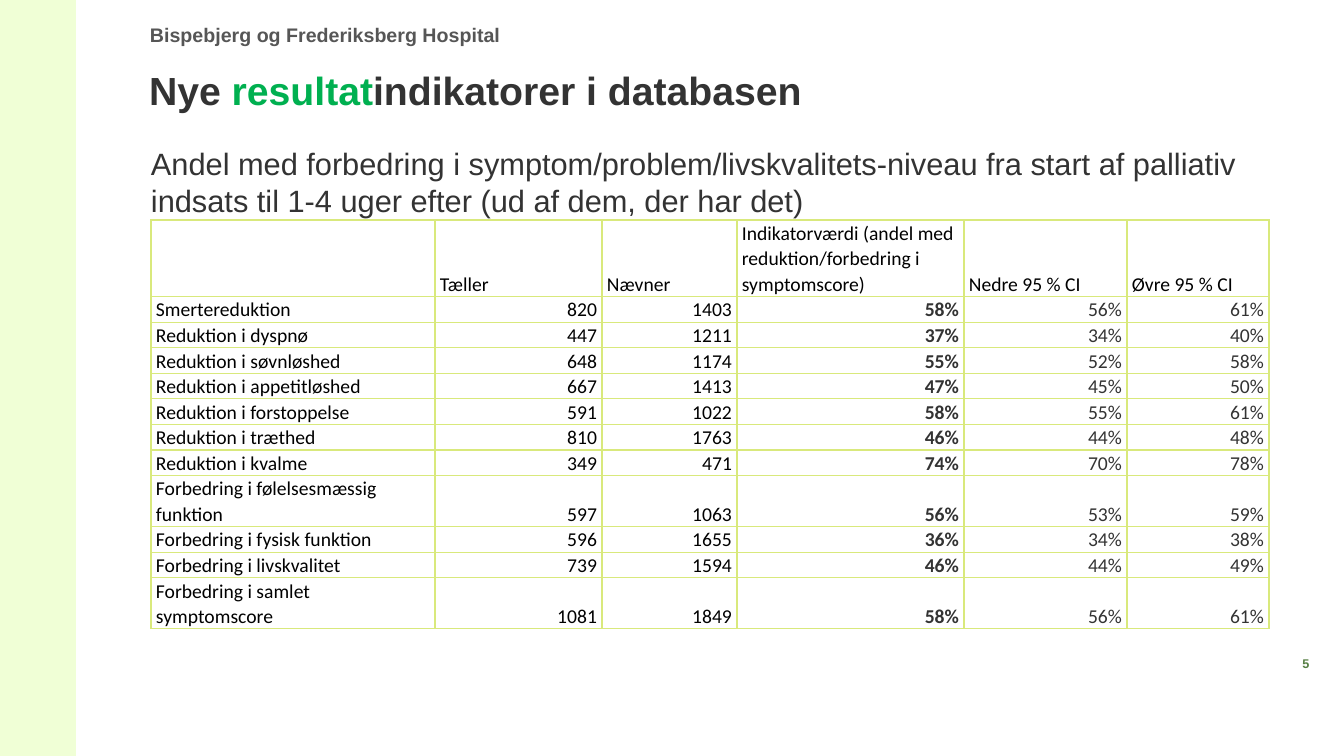
from lxml.etree import SubElement
from pptx import Presentation
from pptx.dml.color import RGBColor as Rgb
from pptx.enum.shapes import MSO_SHAPE as Shape
from pptx.enum.text import MSO_ANCHOR as Anchor, MSO_AUTO_SIZE as Fit, PP_ALIGN as Align
from pptx.oxml.ns import qn
from pptx.util import Pt

PX = 12192000 / 1344
COLORS = {"band": "F0FFD6", "gray": "565656", "page": "567F43", "line": "D9E97C",
          "ink": "333333", "black": "000000", "green": "00B050", "white": "FFFFFF"}
WIDTHS = [284, 167, 135, 227, 163, 142]
HEADS = ["", "Tæller", "Nævner",
         "Indikatorværdi (andel med reduktion/forbedring i symptomscore)",
         "Nedre 95 % CI", "Øvre 95 % CI"]
ROWS = [
    ("Smertereduktion", 820, 1403, 58, 56, 61),
    ("Reduktion i dyspnø", 447, 1211, 37, 34, 40),
    ("Reduktion i søvnløshed", 648, 1174, 55, 52, 58),
    ("Reduktion i appetitløshed", 667, 1413, 47, 45, 50),
    ("Reduktion i forstoppelse", 591, 1022, 58, 55, 61),
    ("Reduktion i træthed", 810, 1763, 46, 44, 48),
    ("Reduktion i kvalme", 349, 471, 74, 70, 78),
    ("Forbedring i følelsesmæssig funktion", 597, 1063, 56, 53, 59),
    ("Forbedring i fysisk funktion", 596, 1655, 36, 34, 38),
    ("Forbedring i livskvalitet", 739, 1594, 46, 44, 49),
    ("Forbedring i samlet symptomscore", 1081, 1849, 58, 56, 61),
]


def px(n):
    return round(n * PX)


def color(name):
    return Rgb.from_string(COLORS[name])


def write(frame, runs, size, font="Arial", bold=False, align=Align.LEFT,
          space=None, after=0):
    """Fill the first paragraph with (text, color name) runs."""
    par = frame.paragraphs[0]
    par.alignment = align
    par.space_before, par.space_after = Pt(0), Pt(after)
    if space:
        par.line_spacing = space
    for text, tint in runs:
        run = par.add_run()
        run.text = text
        run.font.name, run.font.size, run.font.bold = font, Pt(size), bold
        run.font.color.rgb = color(tint)


def setup(frame, anchor=Anchor.TOP):
    frame.word_wrap = True
    frame.auto_size = Fit.NONE
    frame.vertical_anchor = anchor
    frame.margin_left = frame.margin_right = 0
    frame.margin_top = frame.margin_bottom = 0


def label(slide, box, runs, size, **style):
    frame = slide.shapes.add_textbox(*map(px, box)).text_frame
    setup(frame)
    write(frame, runs, size, **style)


def band(slide, box):
    bar = slide.shapes.add_shape(Shape.RECTANGLE, *map(px, box))
    bar.shadow.inherit = False
    bar.fill.solid()
    bar.fill.fore_color.rgb = color("band")
    bar.line.fill.background()


def heading(slide, box, runs):
    title = slide.shapes.title
    title.left, title.top, title.width, title.height = map(px, box)
    setup(title.text_frame, Anchor.BOTTOM)
    write(title.text_frame, runs, 28, bold=True, space=0.85)


def border(cell):
    """Draw all four sides; the lines must precede the fill in the XML."""
    props = cell._tc.get_or_add_tcPr()
    for side in ("a:lnL", "a:lnR", "a:lnT", "a:lnB"):
        line = SubElement(props, qn(side), w=str(Pt(1)))
        SubElement(SubElement(line, qn("a:solidFill")), qn("a:srgbClr"),
                   val=COLORS["line"])


def fill_cell(cell, text, head, col):
    result = not head and col >= 3
    border(cell)
    if result:
        cell.fill.background()
    else:
        cell.fill.solid()
        cell.fill.fore_color.rgb = color("white")
    cell.vertical_anchor = Anchor.BOTTOM
    cell.margin_left = cell.margin_right = px(5)
    cell.margin_top = cell.margin_bottom = 0
    if text:
        write(cell.text_frame, [(text, "ink" if result else "black")], 14,
              font="Calibri", bold=result and col == 3, space=1.07,
              align=Align.LEFT if head or col == 0 else Align.RIGHT)


def results(slide, box):
    shape = slide.shapes.add_table(len(ROWS) + 1, len(HEADS), *map(px, box))
    table = shape.table
    table.first_row = table.horz_banding = False
    for col, width in zip(table.columns, WIDTHS):
        col.width = px(width)
    for row in table.rows:
        row.height = px(21)
    shape.height = px(box[3])
    for r, row in enumerate([HEADS, *ROWS]):
        for c, value in enumerate(row):
            text = f"{value}%" if r and c >= 3 else str(value)
            fill_cell(table.cell(r, c), text, r == 0, c)


def main():
    deck = Presentation()
    deck.slide_width, deck.slide_height = px(1344), px(756)
    slide = deck.slides.add_slide(deck.slide_layouts[5])
    band(slide, (0, 0, 76, 756))
    label(slide, (150, 23, 674, 24),
          [("Bispebjerg og Frederiksberg Hospital", "gray")], 14, bold=True)
    label(slide, (1268, 656, 76, 20), [("5", "page")], 9, bold=True,
          align=Align.CENTER)
    results(slide, (151, 220, 1118, 389))
    label(slide, (151, 145, 1099, 386),
          [("Andel med forbedring i symptom/problem/livskvalitets-niveau fra start "
            "af palliativ indsats til 1-4 uger efter (ud af dem, der har det)", "ink")],
          22, after=12)
    heading(slide, (149, 22, 1118, 92),
            [("Nye ", "ink"), ("resultat", "green"),
             ("indikatorer i databasen", "ink")])
    deck.save("out.pptx")


if __name__ == "__main__":
    main()
